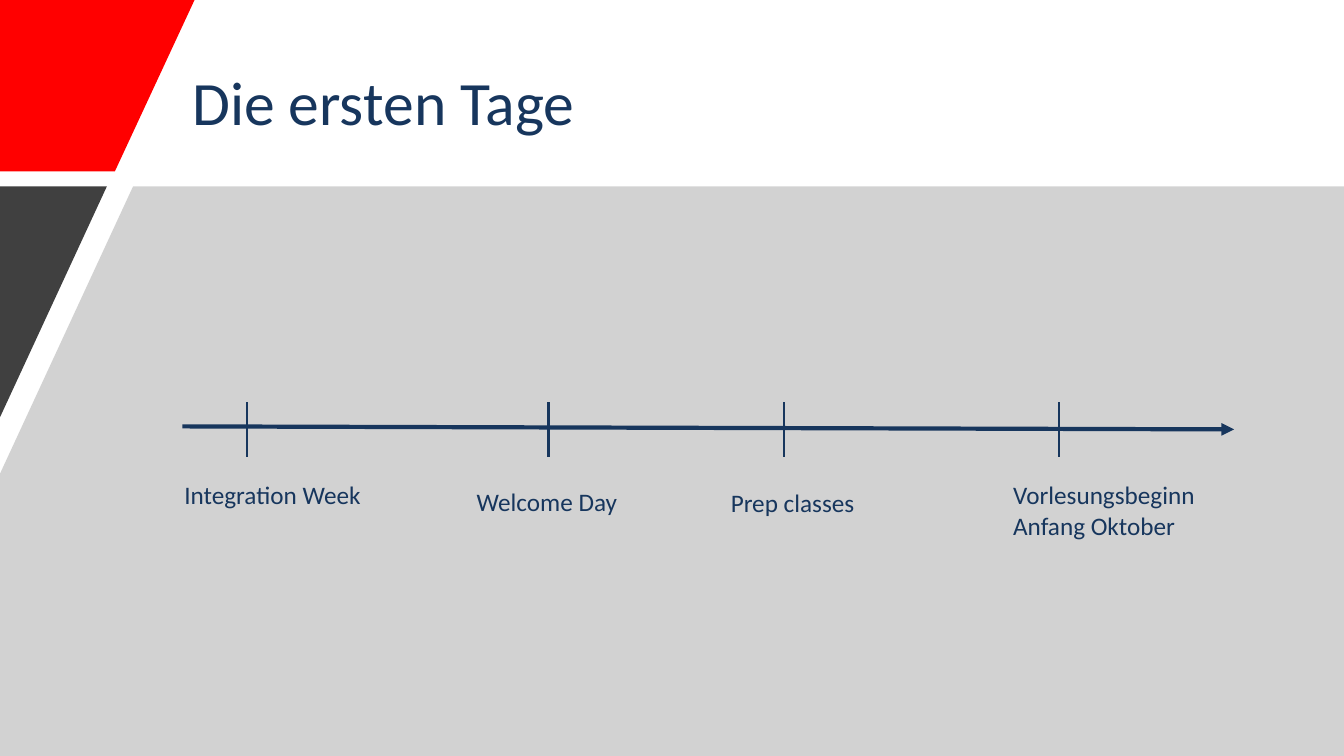
from dataclasses import dataclass

from lxml.etree import SubElement
from pptx import Presentation
from pptx.dml.color import RGBColor
from pptx.enum.shapes import MSO_CONNECTOR
from pptx.enum.text import MSO_ANCHOR
from pptx.oxml.ns import qn
from pptx.slide import Slide
from pptx.util import Inches, Pt


@dataclass(frozen=True)
class Theme:
    font: str = "Calibri"
    navy: str = "17365D"
    red: str = "FF0000"
    charcoal: str = "404040"
    gray: str = "A6A6A6"
    title_size: float = 44
    label_size: float = 18
    axis_width: float = 3
    tick_width: float = 1.5


@dataclass(frozen=True)
class Panel:
    points: tuple[tuple[float, float], ...]
    color: str
    opacity: int = 100


@dataclass(frozen=True)
class Milestone:
    label: str
    tick_x: float
    label_left: float
    label_top: float
    label_height: float = 0.4


THEME = Theme()
SLIDE_WIDTH, SLIDE_HEIGHT = 13.33, 7.5
BAND_TOP = 1.85
TICK_TOP, TICK_BOTTOM = 3.99, 4.53
LABEL_WIDTH = 2.5

PANELS = (
    Panel(((0, 0), (1.93, 0), (1.14, 1.7), (0, 1.7)), THEME.red),
    Panel(
        ((1.32, BAND_TOP), (SLIDE_WIDTH, BAND_TOP), (SLIDE_WIDTH, SLIDE_HEIGHT),
         (0, SLIDE_HEIGHT), (0, 4.7)),
        THEME.gray,
        opacity=50,
    ),
    Panel(((0, BAND_TOP), (1.06, BAND_TOP), (0, 4.14)), THEME.charcoal),
)

MILESTONES = (
    Milestone("Integration Week", 2.45, 1.73, 4.71),
    Milestone("Welcome Day", 5.44, 4.63, 4.78),
    Milestone("Prep classes", 7.78, 7.15, 4.79),
    Milestone("Vorlesungsbeginn Anfang Oktober", 10.5, 9.95, 4.71, 0.71),
)


def add_panel(slide: Slide, panel: Panel) -> None:
    corners = [(Inches(x), Inches(y)) for x, y in panel.points]
    builder = slide.shapes.build_freeform(*corners[0])
    builder.add_line_segments(corners[1:], close=True)
    shape = builder.convert_to_shape()
    shape.shadow.inherit = False
    shape.line.fill.background()
    shape.fill.solid()
    shape.fill.fore_color.rgb = RGBColor.from_string(panel.color)
    if panel.opacity < 100:
        color = shape.fill._xPr.find(f".//{qn('a:srgbClr')}")
        SubElement(color, qn("a:alpha"), val=str(panel.opacity * 1000))


def add_line(slide: Slide, start: tuple[float, float], end: tuple[float, float],
             width: float, arrow: bool = False) -> None:
    connector = slide.shapes.add_connector(
        MSO_CONNECTOR.STRAIGHT, *map(Inches, start + end))
    connector.line.color.rgb = RGBColor.from_string(THEME.navy)
    connector.line.width = Pt(width)
    if arrow:
        SubElement(connector.line._get_or_add_ln(), qn("a:tailEnd"), type="triangle")
    SubElement(connector._element.spPr, qn("a:effectLst"))


def add_text(slide: Slide, text: str, box: tuple[float, float, float, float], size: float,
             anchor: MSO_ANCHOR = MSO_ANCHOR.TOP, line_spacing: float = 1.0) -> None:
    """Add navy text in a box given as left, top, width and height."""
    text_frame = slide.shapes.add_textbox(*map(Inches, box)).text_frame
    text_frame.word_wrap = True
    text_frame.vertical_anchor = anchor
    text_frame.text = text
    paragraph = text_frame.paragraphs[0]
    paragraph.line_spacing = line_spacing
    font = paragraph.runs[0].font
    font.name = THEME.font
    font.size = Pt(size)
    font.color.rgb = RGBColor.from_string(THEME.navy)


def add_milestone(slide: Slide, milestone: Milestone) -> None:
    add_line(slide, (milestone.tick_x, TICK_TOP), (milestone.tick_x, TICK_BOTTOM),
             THEME.tick_width)
    box = (milestone.label_left, milestone.label_top, LABEL_WIDTH, milestone.label_height)
    add_text(slide, milestone.label, box, THEME.label_size)


def main() -> None:
    presentation = Presentation()
    presentation.slide_width = Inches(SLIDE_WIDTH)
    presentation.slide_height = Inches(SLIDE_HEIGHT)
    slide = presentation.slides.add_slide(presentation.slide_layouts[6])

    for panel in PANELS:
        add_panel(slide, panel)
    add_text(slide, "Die ersten Tage", (1.81, 0.4, 10.24, 1.3), THEME.title_size,
             MSO_ANCHOR.MIDDLE, line_spacing=0.9)
    add_line(slide, (1.81, 4.23), (12.24, 4.26), THEME.axis_width, arrow=True)
    for milestone in MILESTONES:
        add_milestone(slide, milestone)

    presentation.save("out.pptx")


if __name__ == "__main__":
    main()
